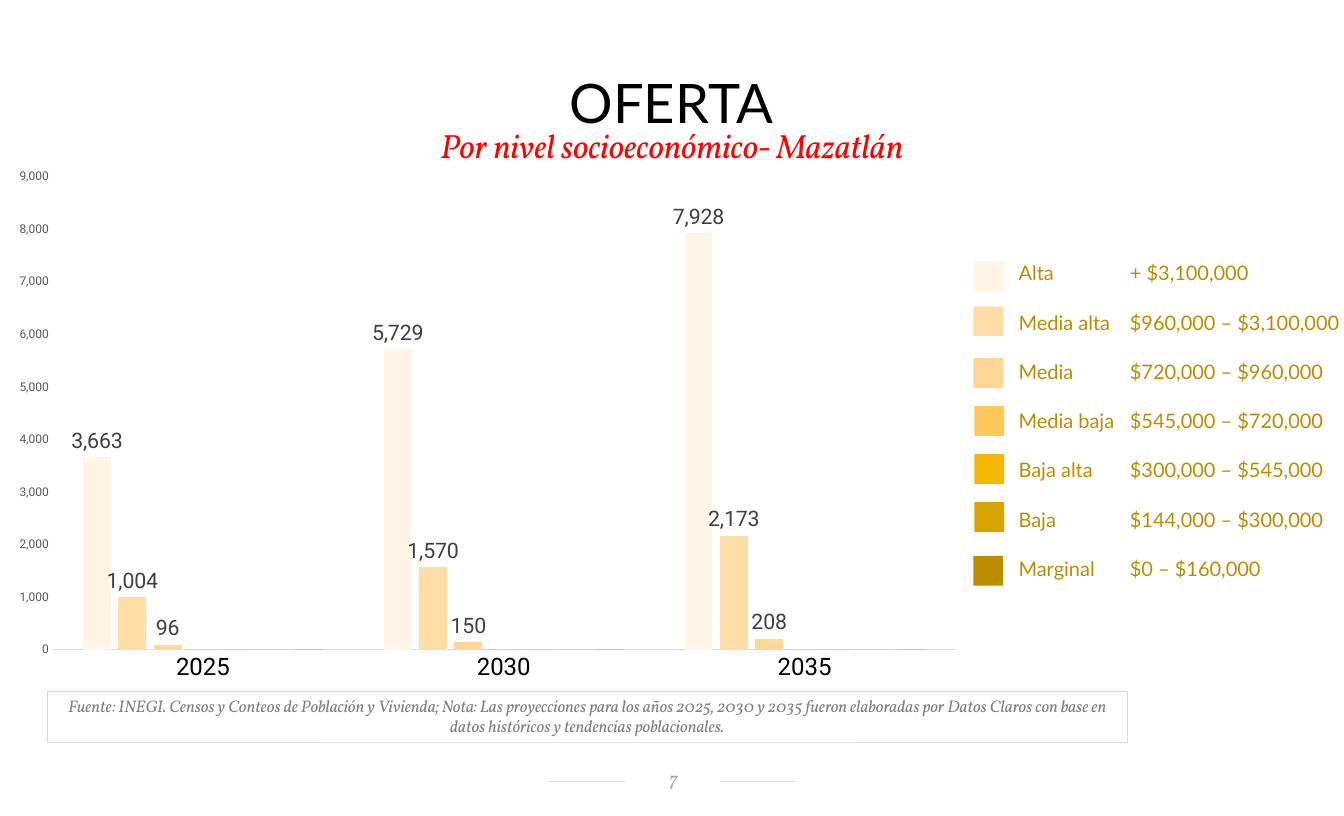
from lxml.etree import SubElement
from pptx import Presentation
from pptx.chart.data import CategoryChartData
from pptx.dml.color import RGBColor
from pptx.enum.chart import XL_CHART_TYPE as ChartType, XL_LABEL_POSITION as LabelPosition
from pptx.enum.chart import XL_TICK_MARK as TickMark
from pptx.enum.shapes import MSO_CONNECTOR as Connector, MSO_SHAPE as Shape
from pptx.enum.text import MSO_ANCHOR as Anchor, PP_ALIGN as Align
from pptx.oxml.ns import qn
from pptx.util import Inches, Pt

TITLE = "OFERTA"
SUBTITLE = "Por nivel socioeconómico- Mazatlán"
SOURCE = (
    "Fuente: INEGI. Censos y Conteos de Población y Vivienda; Nota: Las proyecciones "
    "para los años 2025, 2030 y 2035 fueron elaboradas por Datos Claros con base en "
    "datos históricos y tendencias poblacionales."
)
PAGE_NUMBER = "7"
YEARS = ["2025", "2030", "2035"]
SERIES = [
    ("Series 1", (3663, 5729, 7928), "FFF5E5"),
    ("Series 2", (1004, 1570, 2173), "FFDDA7"),
    ("Series 3", (96, 150, 208), "FFD695"),
    ("Series 4", (0, 0, 0), "8064A2"),
    ("Series 5", (0, 0, 0), "4BACC6"),
    ("Series 6", (0, 0, 0), "F79646"),
    ("Series 7", (0, 0, 0), "2C4D75"),
]
LEVELS = [
    ("Alta", "+ $3,100,000", "FFF5E5", 10.15, 2.72),
    ("Media alta", "$960,000 – $3,100,000", "FFDDA7", 10.14, 3.19),
    ("Media", "$720,000 – $960,000", "FFD695", 10.14, 3.73),
    ("Media baja", "$545,000 – $720,000", "FFC859", 10.15, 4.23),
    ("Baja alta", "$300,000 – $545,000", "F3B700", 10.15, 4.73),
    ("Baja", "$144,000 – $300,000", "DAA400", 10.15, 5.23),
    ("Marginal", "$0 – $160,000", "BC8C00", 10.14, 5.79),
]
SWATCH = 0.31
LEVEL_COLUMNS = (1.16, 2.26)
ROW_HEIGHT = 3.59 / len(LEVELS)
GREY = "D9D9D9"


def color(value):
    return RGBColor.from_string(value)


def set_font(font, name, size, value, italic=False):
    font.name, font.size, font.italic = name, Pt(size), italic
    font.color.rgb = color(value)


def write(frame, text, name, size, value, italic=False, align=Align.CENTER):
    para = frame.paragraphs[0]
    para.alignment = align
    span = para.add_run()
    span.text = text
    set_font(span.font, name, size, value, italic)
    return para


def set_margins(target, left, top, right, bottom):
    target.margin_left, target.margin_top = Inches(left), Inches(top)
    target.margin_right, target.margin_bottom = Inches(right), Inches(bottom)


def add_box(page, place, fill=None, line=None):
    box = page.shapes.add_shape(Shape.RECTANGLE, *map(Inches, place))
    box.shadow.inherit = False
    if fill:
        box.fill.solid()
        box.fill.fore_color.rgb = color(fill)
    else:
        box.fill.background()
    if line:
        box.line.color.rgb = color(line)
        box.line.width = Pt(0.75)
    else:
        box.line.fill.background()
    box.text_frame.word_wrap = True
    return box


def add_text(page, place):
    frame = page.shapes.add_textbox(*map(Inches, place)).text_frame
    frame.word_wrap = True
    return frame


def add_footer(page):
    rule = page.shapes.add_connector(
        Connector.STRAIGHT, Inches(5.71), Inches(8.14), Inches(8.29), Inches(8.14)
    )
    rule.line.color.rgb = color(GREY)
    rule.line.width = Pt(0.75)
    SubElement(rule._element.spPr, qn("a:effectLst"))
    number = add_box(page, (6.51, 7.98, 0.99, 0.29), fill="FFFFFF").text_frame
    number.vertical_anchor = Anchor.MIDDLE
    set_margins(number, 0.11, 0.02, 0.09, 0.05)
    write(number, PAGE_NUMBER, "Vollkorn", 15.4, "A6A6A6", italic=True)
    note = add_box(page, (0.49, 7.2, 11.25, 0.53), line=GREY).text_frame
    note.vertical_anchor = Anchor.TOP
    write(note, SOURCE, "Vollkorn", 12.6, "808080", italic=True)


def add_headings(page):
    title = add_text(page, (0.49, 0.85, 13.01, 0.6))
    set_margins(title, 0.12, 0.06, 0.12, 0.06)
    write(title, TITLE, "Lato", 40.8, "000000").line_spacing = 0.7
    subtitle = add_text(page, (-0.35, 1.25, 14.7, 0.53))
    write(subtitle, SUBTITLE, "Vollkorn", 25.2, "FF0000", italic=True)


def add_levels(page):
    place = (10.61, 2.59, sum(LEVEL_COLUMNS), ROW_HEIGHT * len(LEVELS))
    table = page.shapes.add_table(len(LEVELS), 2, *map(Inches, place)).table
    table.first_row = table.horz_banding = False
    for column, width in zip(table.columns, LEVEL_COLUMNS):
        column.width = Inches(width)
    for row, (name, price, fill, left, top) in enumerate(LEVELS):
        for column, text in enumerate((name, price)):
            cell = table.cell(row, column)
            cell.fill.background()
            cell.vertical_anchor = Anchor.MIDDLE
            set_margins(cell, 0, 0, 0, 0)
            write(cell.text_frame, text, "Lato", 15, "BC8C00", align=Align.LEFT)
        add_box(page, (left, top, SWATCH, SWATCH), fill=fill)


def add_offer_chart(page):
    data = CategoryChartData()
    data.categories = YEARS
    for name, values, _ in SERIES:
        data.add_series(name, values)
    place = map(Inches, (0, 1.66, 10.15, 5.55))
    chart = page.shapes.add_chart(ChartType.COLUMN_CLUSTERED, *place, data).chart
    chart.has_title = chart.has_legend = False
    set_font(chart.font, "Calibri", 10, "000000")

    years, units = chart.category_axis, chart.value_axis
    for axis, size, value in ((years, 18, "000000"), (units, 9, "595959")):
        axis.has_major_gridlines = False
        axis.major_tick_mark = axis.minor_tick_mark = TickMark.NONE
        set_font(axis.tick_labels.font, "Roboto", size, value)
    years.format.line.color.rgb = color(GREY)
    years.format.line.width = Pt(0.75)
    units.format.line.fill.background()
    units.minimum_scale, units.maximum_scale, units.major_unit = 0, 9000, 1000
    units.tick_labels.number_format = "#,##0"
    units.tick_labels.number_format_is_linked = False

    plot = chart.plots[0]
    plot.gap_width, plot.overlap, plot.vary_by_categories = 219, -27, False
    for series, (_, values, fill) in zip(plot.series, SERIES):
        series.format.fill.solid()
        series.format.fill.fore_color.rgb = color(fill)
        if any(values):
            labels = series.data_labels
            labels.show_value = True
            labels.number_format = "#,##0"
            labels.number_format_is_linked = False
            labels.position = LabelPosition.OUTSIDE_END
            set_font(labels.font, "Roboto", 16, "404040")


def main():
    deck = Presentation()
    deck.slide_width, deck.slide_height = Inches(14), Inches(8.5)
    page = deck.slides.add_slide(deck.slide_layouts[6])
    add_footer(page)
    add_headings(page)
    add_levels(page)
    add_offer_chart(page)
    deck.save("out.pptx")


if __name__ == "__main__":
    main()
